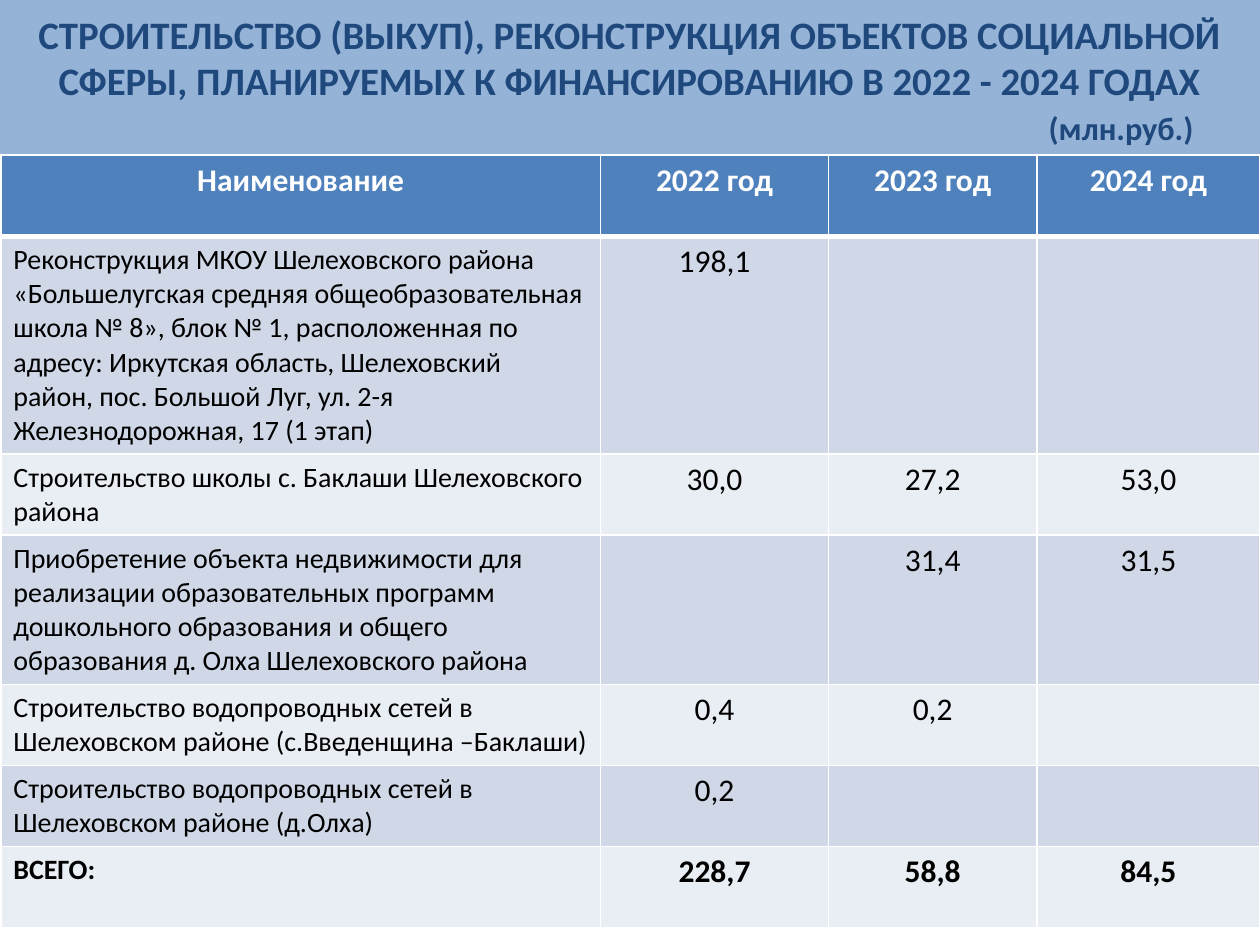
from typing import NamedTuple

from lxml.etree import SubElement
from pptx import Presentation
from pptx.dml.color import RGBColor
from pptx.enum.text import MSO_ANCHOR, MSO_AUTO_SIZE, PP_ALIGN
from pptx.oxml.ns import qn
from pptx.util import Pt

FONT = "Calibri"
NAVY, SKY, BLUE = "1F497D", "95B3D7", "4F81BD"
WHITE, BLACK = "FFFFFF", "000000"
BANDS = ("D0D8E8", "E9EDF4")
HEADER_HEIGHT = 88.6


class Row(NamedTuple):
    name: str
    values: tuple[str, str, str]
    height: float
    bold: bool = False


COLUMN_WIDTHS = (342.7, 130.3, 119, 127.6)
ROWS = (
    Row("Наименование", ("2022 год", "2023 год", "2024 год"), 46.5, True),
    Row("Реконструкция МКОУ Шелеховского района «Большелугская средняя "
        "общеобразовательная школа № 8», блок № 1, расположенная по адресу: "
        "Иркутская область, Шелеховский\n"
        "район, пос. Большой Луг, ул. 2-я Железнодорожная, 17 (1 этап)",
        ("198,1", "", ""), 124.4),
    Row("Строительство школы с. Баклаши Шелеховского района",
        ("30,0", "27,2", "53,0"), 46.3),
    Row("Приобретение объекта недвижимости для реализации образовательных "
        "программ дошкольного образования и общего образования д. Олха "
        "Шелеховского района", ("", "31,4", "31,5"), 85.4),
    Row("Строительство водопроводных сетей в Шелеховском районе "
        "(с.Введенщина –Баклаши)", ("0,4", "0,2", ""), 46.3),
    Row("Строительство водопроводных сетей в Шелеховском районе (д.Олха)",
        ("0,2", "", ""), 46.3),
    Row("ВСЕГО:", ("228,7", "58,8", "84,5"), 46.3, True),
)


def rgb(color: str) -> RGBColor:
    return RGBColor.from_string(color)


def write(frame, text: str, size: float, color: str, bold: bool, align) -> None:
    frame.text = text
    for para in frame.paragraphs:
        para.alignment = align
        font = para.font
        font.name, font.size, font.bold = FONT, Pt(size), bold
        font.color.rgb = rgb(color)


def set_borders(cell, bottom: float) -> None:
    properties = cell._tc.get_or_add_tcPr()
    widths = {"lnL": 1, "lnR": 1, "lnT": 1, "lnB": bottom}
    for position, (side, width) in enumerate(widths.items()):
        line = SubElement(properties, qn(f"a:{side}"), w=str(Pt(width)))
        fill = SubElement(line, qn("a:solidFill"))
        SubElement(fill, qn("a:srgbClr"), val=WHITE)
        properties.insert(position, line)


def fill_row(table, index: int, row: Row) -> None:
    table.rows[index].height = Pt(row.height)
    is_header = index == 0
    color = WHITE if is_header else BLACK
    background = BLUE if is_header else BANDS[(index - 1) % 2]
    for column, text in enumerate((row.name, *row.values)):
        cell = table.cell(index, column)
        is_name = column == 0 and not is_header
        write(cell.text_frame, text, 16 if is_name else 18, color, row.bold,
              PP_ALIGN.LEFT if is_name else PP_ALIGN.CENTER)
        cell.fill.solid()
        cell.fill.fore_color.rgb = rgb(background)
        set_borders(cell, 3 if is_header or index == 0 else 1)


def add_title(page) -> None:
    title = page.shapes.title
    title.left, title.top = Pt(0), Pt(0)
    title.width, title.height = Pt(720), Pt(HEADER_HEIGHT)
    title.fill.solid()
    title.fill.fore_color.rgb = rgb(SKY)
    frame = title.text_frame
    frame.auto_size = MSO_AUTO_SIZE.NONE
    frame.vertical_anchor = MSO_ANCHOR.TOP
    frame.margin_top = Pt(6)
    write(frame, "СТРОИТЕЛЬСТВО (ВЫКУП), РЕКОНСТРУКЦИЯ ОБЪЕКТОВ СОЦИАЛЬНОЙ\n"
          "СФЕРЫ, ПЛАНИРУЕМЫХ К ФИНАНСИРОВАНИЮ В 2022 - 2024 ГОДАХ",
          22.2, NAVY, True, PP_ALIGN.CENTER)


def add_unit(page) -> None:
    box = page.shapes.add_textbox(Pt(562), Pt(58.5), Pt(127), Pt(30))
    frame = box.text_frame
    frame.word_wrap = True
    write(frame, "(млн.руб.)", 18.5, NAVY, True, PP_ALIGN.RIGHT)


def add_budget_table(page) -> None:
    height = sum(row.height for row in ROWS)
    frame = page.shapes.add_table(
        len(ROWS), len(COLUMN_WIDTHS), Pt(0.5), Pt(HEADER_HEIGHT),
        Pt(sum(COLUMN_WIDTHS)), Pt(height))
    table = frame.table
    for column, width in zip(table.columns, COLUMN_WIDTHS):
        column.width = Pt(width)
    for index, row in enumerate(ROWS):
        fill_row(table, index, row)


def main() -> None:
    deck = Presentation()
    deck.slide_width, deck.slide_height = Pt(720), Pt(540)
    page = deck.slides.add_slide(deck.slide_layouts[5])
    # Heading band with the unit of measure
    add_title(page)
    add_unit(page)
    # Objects and their funding by year
    add_budget_table(page)
    deck.save("out.pptx")


if __name__ == "__main__":
    main()
